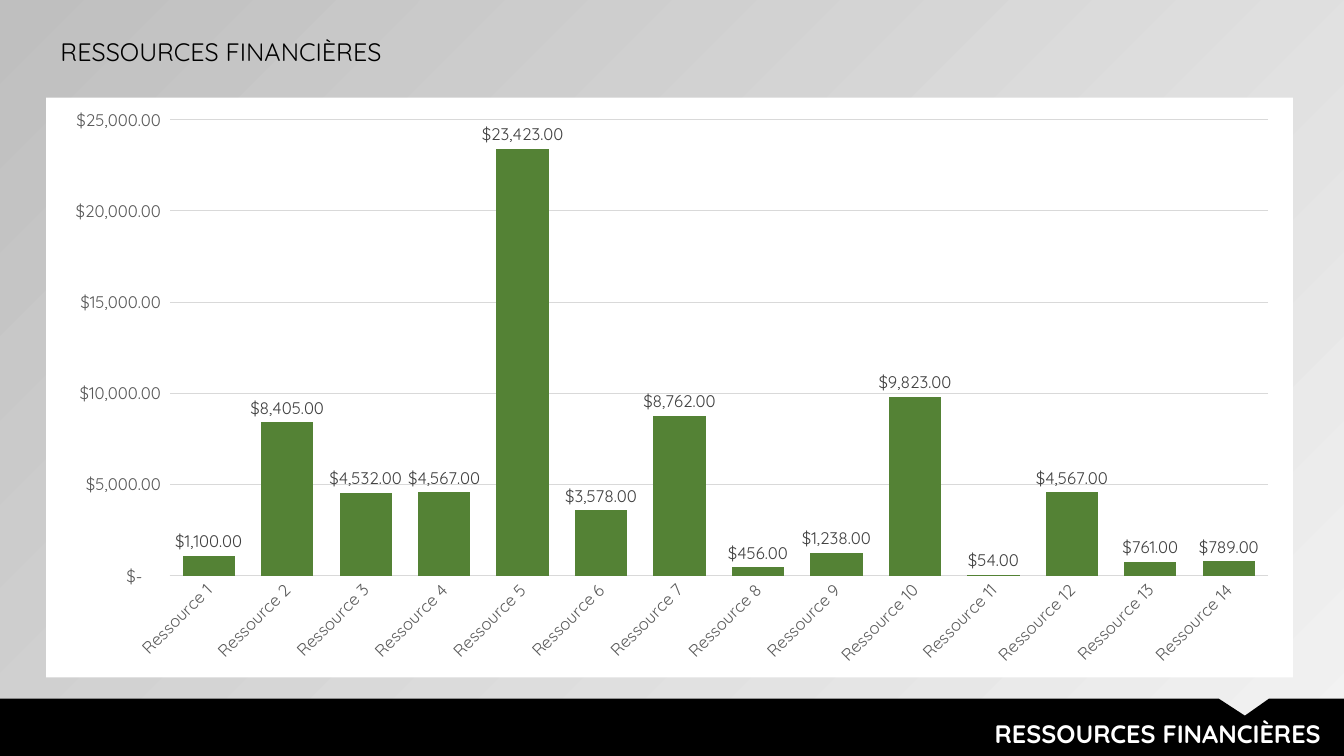
from dataclasses import dataclass
from typing import Any

from lxml.etree import SubElement
from pptx import Presentation
from pptx.chart.data import CategoryChartData
from pptx.dml.color import RGBColor
from pptx.enum.chart import XL_CHART_TYPE, XL_LABEL_POSITION, XL_TICK_MARK
from pptx.enum.text import MSO_ANCHOR, MSO_AUTO_SIZE, PP_ALIGN
from pptx.oxml import parse_xml
from pptx.oxml.ns import nsdecls, qn
from pptx.util import Pt


@dataclass(frozen=True)
class Theme:
    face: str = "Quicksand"
    black: str = "000000"
    white: str = "FFFFFF"
    light: str = "F2F2F2"
    dark: str = "BFBFBF"
    bar: str = "548235"
    rule: str = "D9D9D9"
    tick: str = "595959"
    label: str = "404040"
    head: int = 18
    small: int = 12
    money: str = '_("$"* #,##0.00_);_("$"* \\(#,##0.00\\);_("$"* "-"??_);_(@_)'


@dataclass(frozen=True)
class Caption:
    left: float
    top: float
    width: float
    height: float
    color: str
    bold: bool
    align: Any


THEME = Theme()
TEXT = "RESSOURCES FINANCIÈRES"
TITLE = Caption(36, 22.3, 320, 29, THEME.black, False, PP_ALIGN.LEFT)
FOOTER = Caption(298, 509.8, 652.5, 29, THEME.white, True, PP_ALIGN.RIGHT)
BAND = [(0, 499), (870.5, 499), (889.2, 511.2), (906.5, 499),
        (960, 499), (960, 540), (0, 540)]
VALUES = [1100, 8405, 4532, 4567, 23423, 3578, 8762,
          456, 1238, 9823, 54, 4567, 761, 789]


def put(item: Any, **values: Any) -> None:
    for name, value in values.items():
        setattr(item, name, value)


def rgb(code: str) -> RGBColor:
    return RGBColor.from_string(code)


def style(font: Any, size: int, color: str, bold: bool = False) -> None:
    put(font, name=THEME.face, size=Pt(size), bold=bold)
    font.color.rgb = rgb(color)


def write(box: Any, cap: Caption) -> None:
    put(box, left=Pt(cap.left), top=Pt(cap.top),
        width=Pt(cap.width), height=Pt(cap.height))
    frame = box.text_frame
    put(frame, word_wrap=True, vertical_anchor=MSO_ANCHOR.TOP,
        auto_size=MSO_AUTO_SIZE.SHAPE_TO_FIT_TEXT)
    par = frame.paragraphs[0]
    par.alignment = cap.align
    run = par.add_run()
    run.text = TEXT
    style(run.font, THEME.head, cap.color, cap.bold)


def paint(slide: Any) -> None:
    fill = slide.background.fill
    fill.gradient()
    fill.gradient_angle = 135
    for stop, code in zip(fill.gradient_stops, (THEME.light, THEME.dark)):
        stop.color.rgb = rgb(code)
    # The light end is partly transparent
    first = next(slide.background._cSld.iter(qn("a:srgbClr")))
    SubElement(first, qn("a:alpha"), val="40000")


def draw_band(slide: Any) -> None:
    pen = slide.shapes.build_freeform(*map(Pt, BAND[0]))
    pen.add_line_segments([(Pt(x), Pt(y)) for x, y in BAND[1:]], close=True)
    band = pen.convert_to_shape()
    band.shadow.inherit = False
    band.fill.solid()
    band.fill.fore_color.rgb = rgb(THEME.black)
    band.line.fill.background()


def rule(line: Any) -> None:
    line.width = Pt(0.75)
    line.color.rgb = rgb(THEME.rule)


def draw_chart(slide: Any) -> None:
    data = CategoryChartData(number_format=THEME.money)
    data.categories = [f"Ressource {n}" for n in range(1, len(VALUES) + 1)]
    data.add_series("Series 1", VALUES)
    chart = slide.shapes.add_chart(
        XL_CHART_TYPE.COLUMN_CLUSTERED,
        Pt(33), Pt(69.8), Pt(890.6), Pt(414), data).chart
    put(chart, has_legend=False, has_title=False)
    style(chart.font, 10, THEME.black)

    # White chart area
    chart._chartSpace.find(qn("c:chart")).addnext(parse_xml(
        f'<c:spPr {nsdecls("c", "a")}><a:solidFill><a:srgbClr '
        f'val="{THEME.white}"/></a:solidFill><a:ln><a:noFill/></a:ln></c:spPr>'))

    # Axes
    cats, vals = chart.category_axis, chart.value_axis
    for axis in (cats, vals):
        put(axis, major_tick_mark=XL_TICK_MARK.NONE,
            minor_tick_mark=XL_TICK_MARK.NONE)
        style(axis.tick_labels.font, THEME.small, THEME.tick)
    rule(cats.format.line)
    cats._element.find(qn("c:txPr")).find(qn("a:bodyPr")).set("rot", "-2700000")
    put(vals, minimum_scale=0, maximum_scale=25000, major_unit=5000,
        has_major_gridlines=True)
    rule(vals.major_gridlines.format.line)
    vals.format.line.fill.background()

    # Bars and their labels
    plot = chart.plots[0]
    put(plot, gap_width=50, vary_by_categories=False, has_data_labels=True)
    fill = plot.series[0].format.fill
    fill.solid()
    fill.fore_color.rgb = rgb(THEME.bar)
    labels = plot.data_labels
    put(labels, show_value=True, position=XL_LABEL_POSITION.OUTSIDE_END)
    style(labels.font, THEME.small, THEME.label)
    for item in (labels, vals.tick_labels):
        put(item, number_format=THEME.money, number_format_is_linked=False)


def main() -> None:
    deck = Presentation()
    put(deck, slide_width=Pt(960), slide_height=Pt(540))
    slide = deck.slides.add_slide(deck.slide_layouts[5])
    paint(slide)
    draw_band(slide)
    write(slide.shapes.add_textbox(0, 0, 0, 0), FOOTER)
    draw_chart(slide)
    write(slide.shapes.title, TITLE)
    deck.save("out.pptx")


if __name__ == "__main__":
    main()
